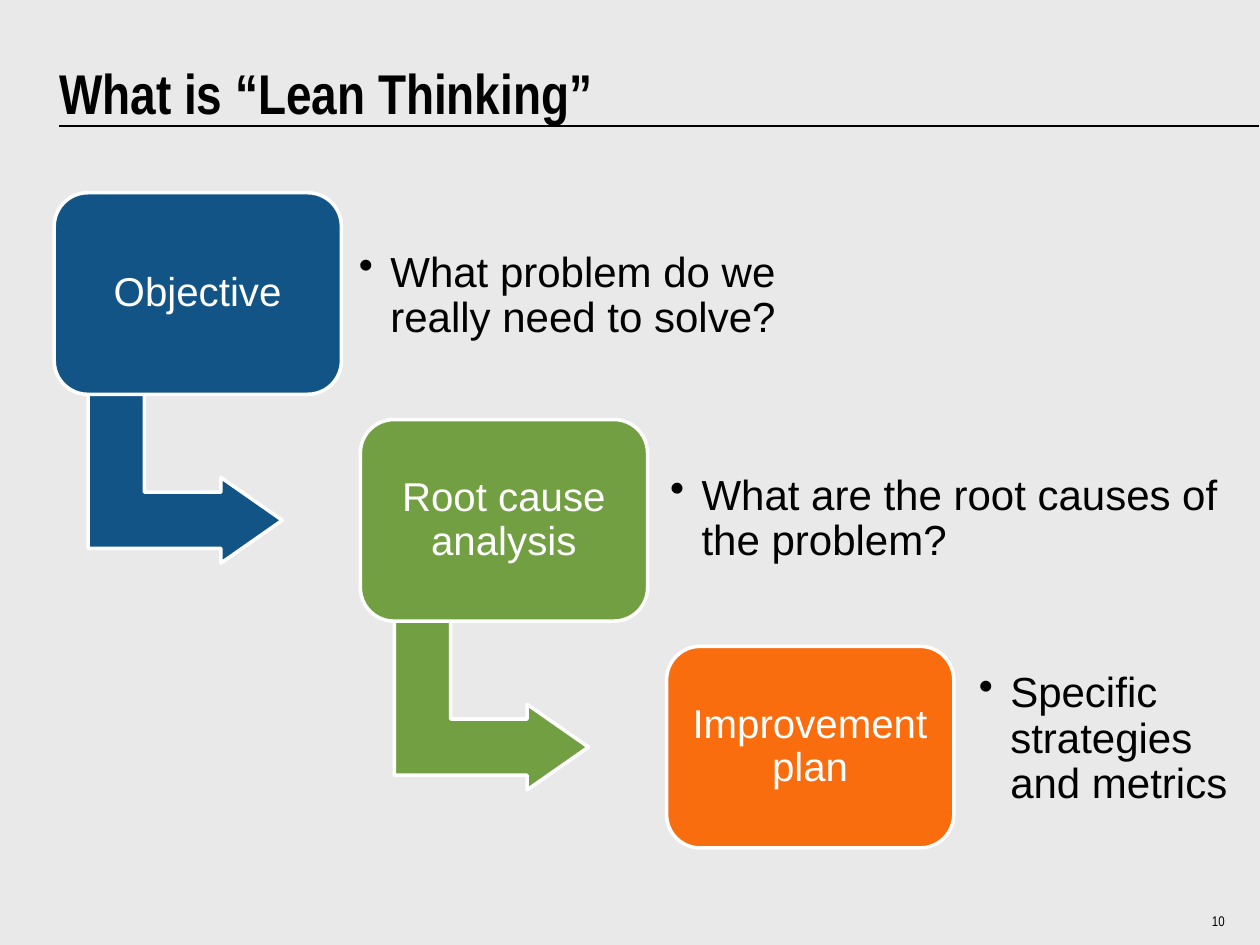
from lxml import etree
from pptx import Presentation
from pptx.dml.color import RGBColor
from pptx.enum import shapes, text
from pptx.oxml import ns
from pptx.util import Inches, Pt

HUES = {"back": "E9E9E9", "ink": "000000", "white": "FFFFFF",
        "blue": "125486", "green": "729F42", "orange": "F96D0F"}
COL, ROW = 2.43, 1.8          # pitch of the staircase
LEFT, TOP = 0.43, 1.53        # corner of the first step
WIDE, HIGH = 2.28, 1.6        # size of a step
LONG, DEEP = 1.54, 1.36       # size of an arrow as seen


def rgb(name):
    return RGBColor.from_string(HUES[name])


def write(shape, words, size, font="Arial", hue="ink", bold=False, align="LEFT",
          anchor="MIDDLE", pad=0.1, space=1.0, bullet=False):
    """Fill the text frame of a shape with one formatted paragraph."""
    frame = shape.text_frame
    frame.word_wrap = True
    frame.vertical_anchor = text.MSO_ANCHOR[anchor]
    frame.margin_left = frame.margin_right = Inches(pad)
    frame.margin_top = frame.margin_bottom = Inches(pad)
    para = frame.paragraphs[0]
    para.text = words
    para.alignment = text.PP_ALIGN[align]
    para.line_spacing = space
    if bullet:
        props = para._p.get_or_add_pPr()
        props.set("marL", str(Inches(0.25)))
        props.set("indent", str(Inches(-0.25)))
        etree.SubElement(props, ns.qn("a:buChar")).set("char", "•")
    para.font.name = font
    para.font.size = Pt(size)
    para.font.bold = bold
    para.font.color.rgb = rgb(hue)


deck = Presentation()
deck.slide_width, deck.slide_height = Inches(10), Inches(7.5)
slide = deck.slides.add_slide(deck.slide_layouts[6])
slide.background.fill.solid()
slide.background.fill.fore_color.rgb = rgb("back")
parts = slide.shapes

# Title, rule and page number
title = parts.add_textbox(*map(Inches, (0.47, 0.19, 9.02, 0.81)))
write(title, "What is “Lean Thinking”", 32, font="Arial Narrow", bold=True,
      anchor="BOTTOM", pad=0)
rule = parts.add_connector(shapes.MSO_CONNECTOR.STRAIGHT,
                           *map(Inches, (0.47, 1, 9.99, 1)))
rule.line.color.rgb = rgb("ink")
rule.line.width = Pt(1)
etree.SubElement(rule._element.spPr, ns.qn("a:effectLst"))
page = parts.add_textbox(*map(Inches, (9.29, 7.18, 0.43, 0.25)))
write(page, "10", 8, font="Arial Narrow", align="RIGHT", pad=0)

# Staircase: step, hue, note, left edge, width and middle of the note
steps = [
    ("Objective", "blue", "What problem do we really need to solve?", 2.75, 3.91, 2.35),
    ("Root cause analysis", "green", "What are the root causes of the problem?",
     5.22, 4.76, 4.12),
    ("Improvement plan", "orange", "Specific strategies and metrics", 7.67, 2.33, 5.87),
]
for i, (name, hue, note, left, width, mid) in enumerate(steps):
    x, y = LEFT + i * COL, TOP + i * ROW
    drawn = []
    if i < len(steps) - 1:
        # A quarter turn swaps width and height about the centre
        cx, cy = x + 0.27 + LONG / 2, y + HIGH - 0.02 + DEEP / 2
        arrow = parts.add_shape(
            shapes.MSO_SHAPE.BENT_UP_ARROW,
            *map(Inches, (cx - DEEP / 2, cy - LONG / 2, DEEP, LONG)))
        arrow.rotation = 90
        for k, value in enumerate((0.328, 0.25, 0.358)):
            arrow.adjustments[k] = value
        drawn.append(arrow)
    step = parts.add_shape(shapes.MSO_SHAPE.ROUNDED_RECTANGLE,
                           *map(Inches, (x, y, WIDE, HIGH)))
    write(step, name, 23, hue="white", align="CENTER", space=0.9)
    drawn.append(step)
    for shape in drawn:
        shape.shadow.inherit = False
        shape.fill.solid()
        shape.fill.fore_color.rgb = rgb(hue)
        shape.line.color.rgb = rgb("white")
        shape.line.width = Pt(2)
    high = HIGH if i == 0 else 1.29
    box = parts.add_textbox(*map(Inches, (left, mid - high / 2, width, high)))
    write(box, note, 24, space=0.9, bullet=True)

deck.save("out.pptx")
